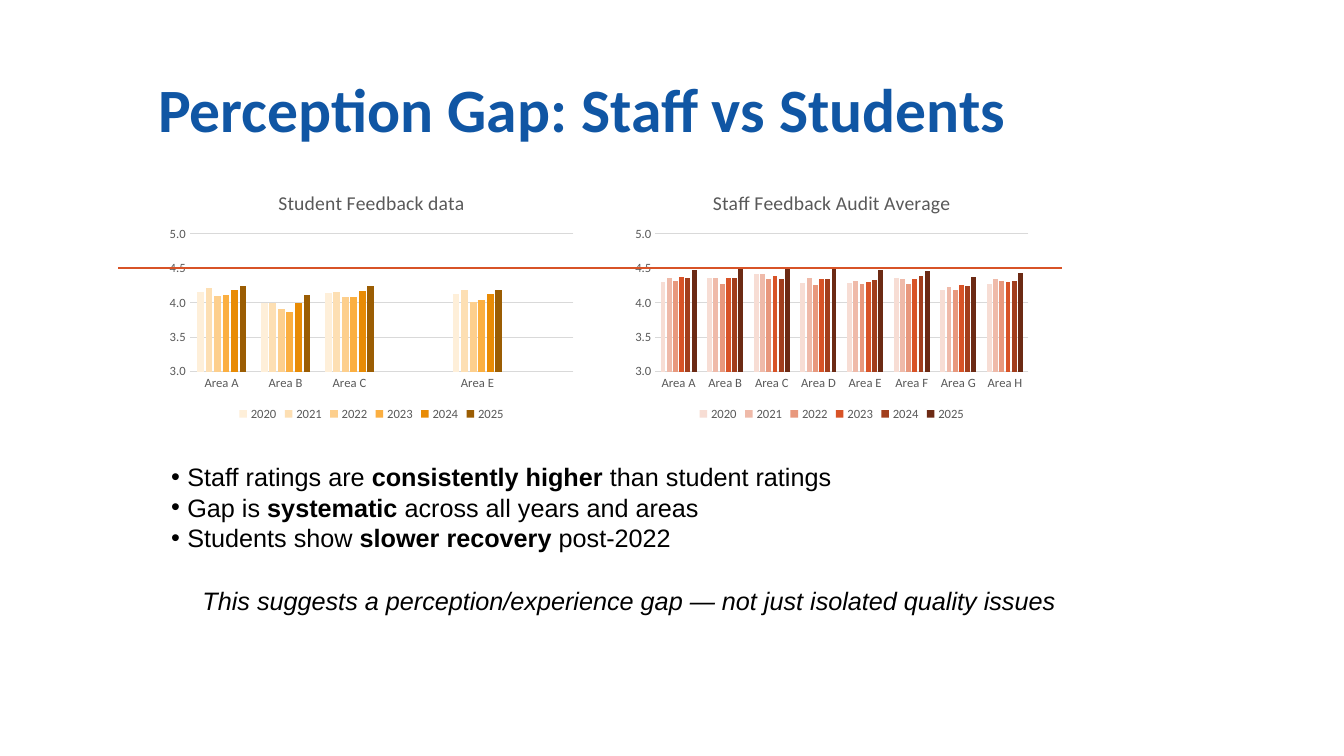
import pptx
import pptx.util
import pptx.chart.data
import pptx.dml.color
import pptx.enum.chart
import pptx.enum.shapes
import pptx.enum.text
import pptx.oxml.ns
import lxml.etree

Inches, Pt = pptx.util.Inches, pptx.util.Pt
ANCHOR = pptx.enum.text.MSO_ANCHOR

COLORS = {"title": "1056A4", "text": "000000", "label": "595959",
          "grid": "D9D9D9", "target": "D85327"}
TITLE = "Perception Gap: Staff vs Students"
YEARS = ["2020", "2021", "2022", "2023", "2024", "2025"]
CHARTS = [
    {"title": "Student Feedback data",
     "box": (1.6, 1.74, 4.17, 2.48),
     "areas": ["Area A", "Area B", "Area C", "", "Area E", ""],
     "ratings": [
         [4.16, 3.99, 4.14, None, 4.13, None],
         [4.21, 4, 4.16, None, 4.18, None],
         [4.1, 3.91, 4.08, None, 4.01, None],
         [4.12, 3.86, 4.08, None, 4.04, None],
         [4.18, 3.99, 4.17, None, 4.13, None],
         [4.24, 4.11, 4.24, None, 4.19, None]],
     "shades": ["FEEFD9", "FDDFB3", "FDCF8D", "FBAF41", "E88B05", "9B5D03"]},
    {"title": "Staff Feedback Audit Average",
     "box": (6.22, 1.74, 4.06, 2.48),
     "areas": [f"Area {letter}" for letter in "ABCDEFGH"],
     "ratings": [
         [4.3, 4.36, 4.42, 4.29, 4.29, 4.36, 4.18, 4.27],
         [4.36, 4.36, 4.42, 4.36, 4.31, 4.34, 4.23, 4.34],
         [4.32, 4.28, 4.34, 4.26, 4.27, 4.28, 4.18, 4.32],
         [4.38, 4.36, 4.39, 4.35, 4.3, 4.35, 4.26, 4.3],
         [4.36, 4.36, 4.35, 4.35, 4.33, 4.39, 4.24, 4.31],
         [4.48, 4.5, 4.51, 4.49, 4.47, 4.46, 4.38, 4.44]],
     "shades": ["F7DDD4", "EFBAA9", "E8987D", "D85327", "A23E1D", "6C2A14"]},
]
# Each finding: before, emphasis, after
FINDINGS = [
    ("Staff ratings are ", "consistently higher", " than student ratings"),
    ("Gap is ", "systematic", " across all years and areas"),
    ("Students show ", "slower recovery", " post-2022"),
]
CONCLUSION = "This suggests a perception/experience gap — not just isolated quality issues"


def rgb(hex_string):
    return pptx.dml.color.RGBColor.from_string(hex_string)


def set_font(font, size, color, name):
    font.size, font.name = Pt(size), name
    font.color.rgb = rgb(color)


def set_line(line, color, width):
    line.color.rgb = rgb(color)
    line.width = Pt(width)


def add_text_frame(slide, box, anchor):
    frame = slide.shapes.add_textbox(*map(Inches, box)).text_frame
    frame.word_wrap = True
    frame.vertical_anchor = anchor
    return frame


def add_bullet(paragraph, indent):
    properties = paragraph._p.get_or_add_pPr()
    properties.set("marL", str(Inches(indent)))
    properties.set("indent", str(-Inches(indent)))
    for tag, key, value in (("a:buFont", "typeface", "Arial"), ("a:buChar", "char", "•")):
        lxml.etree.SubElement(properties, pptx.oxml.ns.qn(tag)).set(key, value)


def add_ratings_chart(slide, content):
    data = pptx.chart.data.CategoryChartData(number_format="0.0")
    data.categories = content["areas"]
    for year, ratings in zip(YEARS, content["ratings"]):
        data.add_series(year, ratings)
    chart = slide.shapes.add_chart(
        pptx.enum.chart.XL_CHART_TYPE.COLUMN_CLUSTERED,
        *map(Inches, content["box"]), data).chart
    set_font(chart.font, 10, COLORS["text"], "Calibri")

    chart.has_title = True
    heading = chart.chart_title.text_frame.paragraphs[0]
    heading.text = content["title"]
    set_font(heading.font, 14, COLORS["label"], "Calibri")
    heading.font.bold = False
    chart.chart_title.include_in_layout = False

    chart.has_legend = True
    chart.legend.position = pptx.enum.chart.XL_LEGEND_POSITION.BOTTOM
    chart.legend.include_in_layout = False
    set_font(chart.legend.font, 9, COLORS["label"], "Calibri")

    areas, scale = chart.category_axis, chart.value_axis
    for axis in (areas, scale):
        axis.major_tick_mark = pptx.enum.chart.XL_TICK_MARK.NONE
        set_font(axis.tick_labels.font, 9, COLORS["label"], "Calibri")
    set_line(areas.format.line, COLORS["grid"], 0.75)
    scale.format.line.fill.background()
    scale.minimum_scale, scale.maximum_scale, scale.major_unit = 3, 5, 0.5
    scale.tick_labels.number_format = "0.0"
    scale.tick_labels.number_format_is_linked = False
    set_line(scale.major_gridlines.format.line, COLORS["grid"], 0.75)

    plot = chart.plots[0]
    plot.gap_width, plot.overlap = 219, -27
    plot.vary_by_categories = False
    for series, shade in zip(plot.series, content["shades"]):
        series.invert_if_negative = False
        series.format.fill.solid()
        series.format.fill.fore_color.rgb = rgb(shade)


def main():
    deck = pptx.Presentation()
    deck.slide_width, deck.slide_height = Inches(13.33), Inches(7.5)
    slide = deck.slides.add_slide(deck.slide_layouts[6])

    title = add_text_frame(slide, (1.47, 0.38, 9.26, 1.47), ANCHOR.MIDDLE).paragraphs[0]
    title.text = TITLE
    title.line_spacing = 0.9
    set_font(title.font, 44, COLORS["title"], "Calibri")
    title.font.bold = True

    for content in CHARTS:
        add_ratings_chart(slide, content)

    findings = add_text_frame(slide, (1.6, 4.22, 6.81, 1.31), ANCHOR.BOTTOM)
    for index, parts in enumerate(FINDINGS):
        finding = findings.add_paragraph() if index else findings.paragraphs[0]
        add_bullet(finding, 0.16)
        set_font(finding.font, 18, COLORS["text"], "Arial")
        for part in parts:
            finding.add_run().text = part
        finding.runs[1].font.bold = True

    conclusion = add_text_frame(slide, (1.91, 5.76, 8.92, 0.4), ANCHOR.MIDDLE).paragraphs[0]
    conclusion.text = CONCLUSION
    set_font(conclusion.font, 18, COLORS["text"], "Arial")
    conclusion.font.italic = True

    target = slide.shapes.add_connector(
        pptx.enum.shapes.MSO_CONNECTOR.STRAIGHT,
        Inches(10.53), Inches(2.66), Inches(1.17), Inches(2.66))
    set_line(target.line, COLORS["target"], 1.5)
    lxml.etree.SubElement(target._element.spPr, pptx.oxml.ns.qn("a:effectLst"))

    deck.save("out.pptx")


if __name__ == "__main__":
    main()
